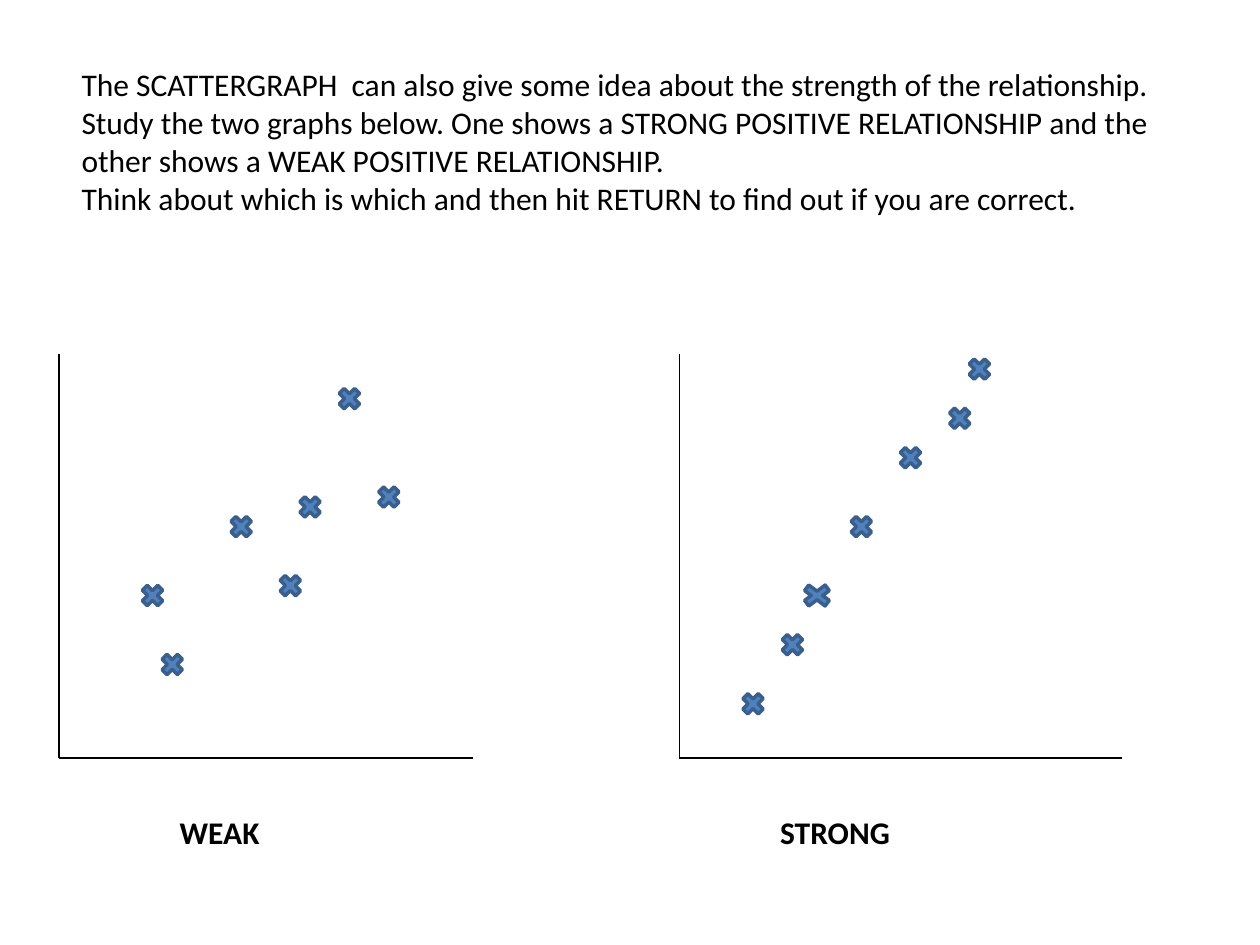
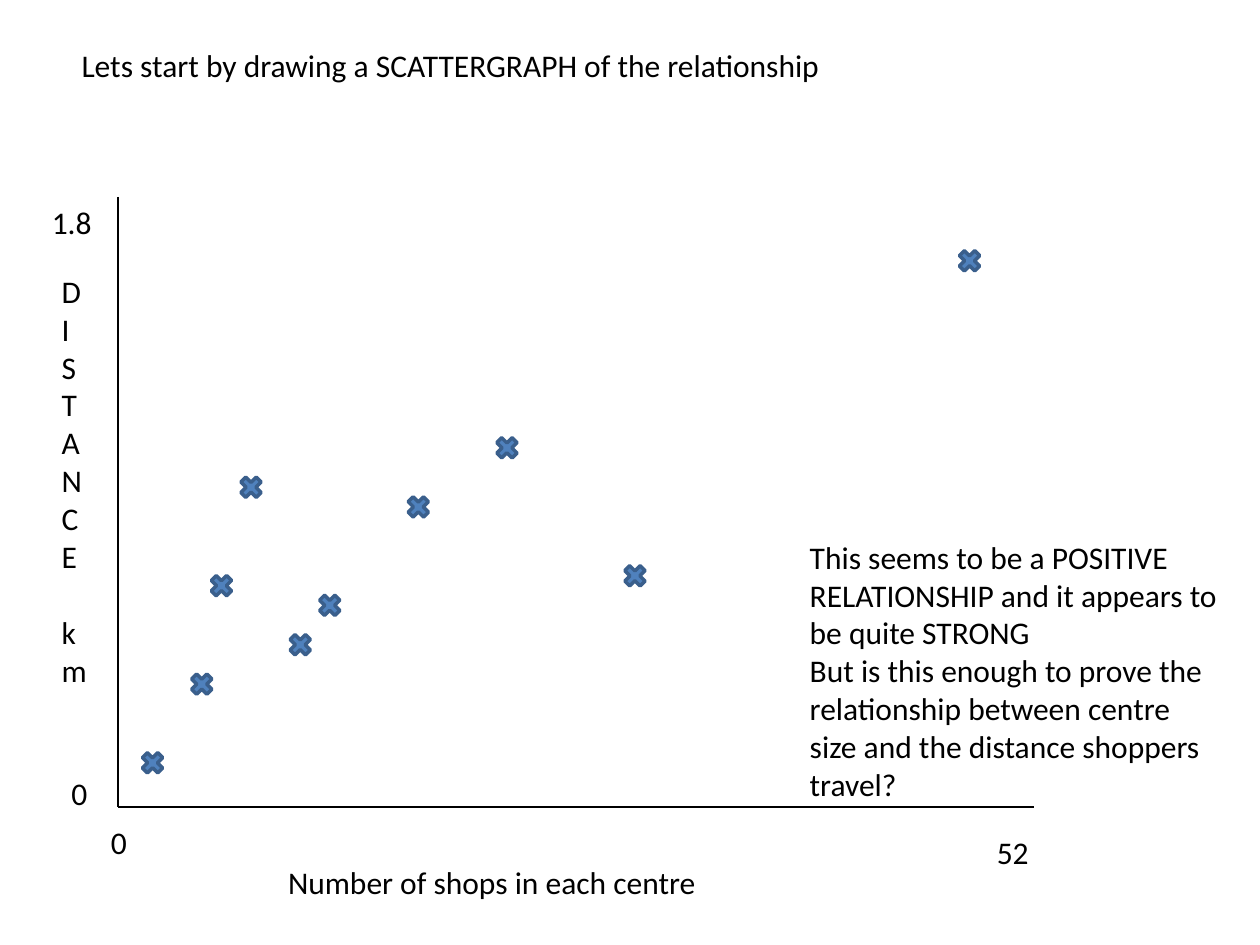
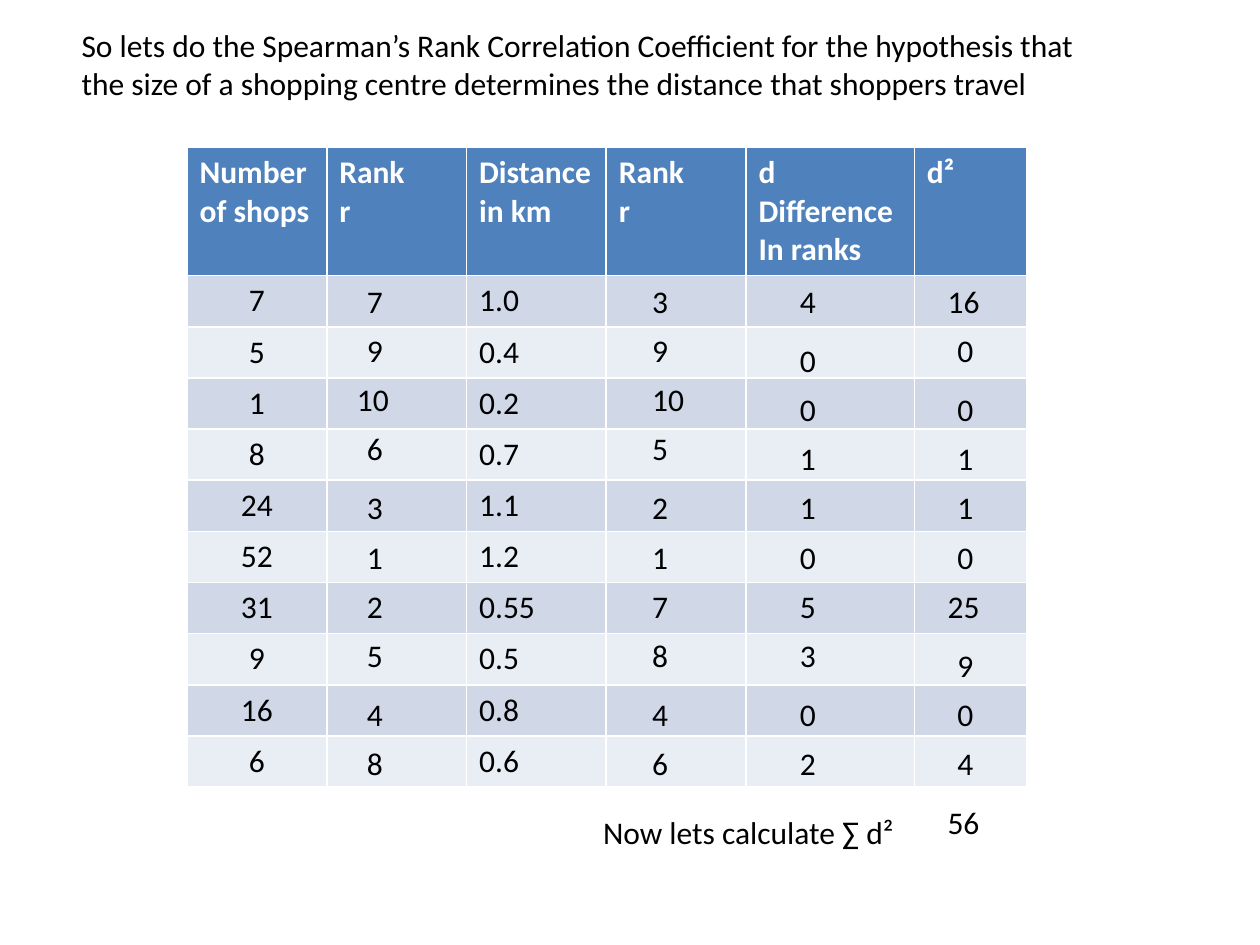
from pptx import Presentation
from pptx.dml.color import RGBColor
from pptx.enum.shapes import MSO_CONNECTOR, MSO_SHAPE
from pptx.enum.text import MSO_ANCHOR, MSO_AUTO_SIZE, PP_ALIGN
from pptx.oxml.ns import qn
from pptx.util import Emu, Pt
from lxml import etree

STRAIGHT = MSO_CONNECTOR.STRAIGHT
CROSS = MSO_SHAPE.MATH_MULTIPLY
LEFT, CENTER = PP_ALIGN.LEFT, PP_ALIGN.CENTER
TOP = MSO_ANCHOR.TOP
NO_FIT, GROW = MSO_AUTO_SIZE.NONE, MSO_AUTO_SIZE.SHAPE_TO_FIT_TEXT

BLACK = RGBColor(0x00, 0x00, 0x00)
WHITE = RGBColor(0xFF, 0xFF, 0xFF)
BLUE = RGBColor(0x4F, 0x81, 0xBD)
DARK_BLUE = RGBColor(0x3A, 0x5F, 0x8C)
BAND_DARK = RGBColor(0xD0, 0xD8, 0xE8)
BAND_LIGHT = RGBColor(0xE9, 0xED, 0xF4)

FONT, TEXT_SIZE = "Calibri", Pt(18)
TITLE_ONLY = 5
LINE_H = 51
MARKER = 30


def px(n):
    """Convert px to EMU, at 128 px to the inch."""
    return Emu(round(n * 914400 / 128))


def write(tf, lines, color=BLACK, bold=False, align=LEFT):
    """Write one paragraph for each line."""
    for i, line in enumerate(lines):
        p = tf.paragraphs[0] if i == 0 else tf.add_paragraph()
        p.alignment = align
        r = p.add_run()
        r.text = line
        r.font.name, r.font.size = FONT, TEXT_SIZE
        r.font.bold, r.font.color.rgb = bold, color


def add_text(s, x, y, w, lines, h=LINE_H, bold=False):
    tf = s.shapes.add_textbox(px(x), px(y), px(w), px(h)).text_frame
    tf.word_wrap, tf.auto_size = True, GROW
    write(tf, lines, bold=bold)
    return tf


def add_slide(prs, title_lines, y, w, h):
    """Add a slide whose title is a small left-aligned text."""
    s = prs.slides.add_slide(prs.slide_layouts[TITLE_ONLY])
    title = s.shapes.title
    title.left, title.top, title.width, title.height = px(70), px(y), px(w), px(h)
    tf = title.text_frame
    tf.word_wrap, tf.auto_size, tf.vertical_anchor = True, NO_FIT, TOP
    write(tf, title_lines)
    return s


def add_axis(s, x1, y1, x2, y2):
    line = s.shapes.add_connector(STRAIGHT, px(x1), px(y1), px(x2), px(y2))
    line.line.color.rgb, line.line.width = BLACK, Pt(0.75)
    etree.SubElement(line._element.spPr, qn("a:effectLst"))


def add_scatter(s, x, y, w, h, points):
    """Draw both axes and a cross at each point (dx, dy[, width]) of the box."""
    add_axis(s, x, y, x, y + h)
    add_axis(s, x, y + h, x + w, y + h)
    for dx, dy, *width in points:
        sp = s.shapes.add_shape(CROSS, px(x + dx), px(y + dy),
                                px(width[0] if width else MARKER), px(MARKER))
        sp.shadow.inherit = False
        sp.fill.solid()
        sp.fill.fore_color.rgb = BLUE
        sp.line.color.rgb, sp.line.width = DARK_BLUE, Pt(2)


def strength_slide(prs):
    s = add_slide(prs, [
        "The SCATTERGRAPH  can also give some idea about the strength of the relationship.",
        "Study the two graphs below. One shows a STRONG POSITIVE RELATIONSHIP and the "
        "other shows a WEAK POSITIVE RELATIONSHIP.",
        "Think about which is which and then hit RETURN to find out if you are correct.",
    ], 60, 1130, 168)
    weak = [(170, 160), (320, 130), (100, 300), (280, 30), (220, 220), (80, 230), (240, 140)]
    strong = [(290, 0), (220, 90), (170, 160), (120, 230, 40), (100, 280), (60, 340), (270, 50)]
    y, h = 360, 410
    for x, w, points, label, label_dx, label_w in (
            (60, 420, weak, "WEAK", 110, 180),
            (690, 450, strong, "STRONG", 90, 200)):
        add_scatter(s, x, y, w, h, points)
        add_text(s, x + label_dx, y + h + 50, label_w, [label], bold=True)


def shops_scatter(s, x, y, w, h):
    add_scatter(s, x, y, w, h, [
        (120, 280), (70, 480), (20, 560), (170, 440), (380, 240),
        (850, 50), (510, 370), (200, 400), (290, 300), (90, 380)])
    for dx, dy, label_w, label in (
            (-20, h + 10, 70, "0"),
            (w - 50, h + 20, 60, "52"),
            (160, h + 50, 530, "Number of shops in each centre"),
            (-60, h - 40, 40, "0"),
            (-80, 0, 70, "1.8")):
        add_text(s, x + dx, y + dy, label_w, [label])
    tf = add_text(s, x - 70, y + 70, 50, [*"DISTANCE", "km"], h=439)
    tf.paragraphs[-1].space_before = Pt(22)


def shops_slide(prs):
    s = add_slide(prs, ["Lets start by drawing a SCATTERGRAPH of the relationship"],
                  40, 1090, LINE_H)
    shops_scatter(s, 120, 200, 930, 620)
    add_text(s, 810, 540, 440, [
        "This seems to be a POSITIVE RELATIONSHIP and it appears to be quite STRONG",
        "But is this enough to prove the relationship between centre size and the "
        "distance shoppers travel?"], h=284)


def rank_table(s, x, y):
    headers = [["Number of shops"], ["Rank", "r"], ["Distance in km"], ["Rank", "r"],
               ["d", "Difference", "In ranks"], ["d²"]]
    shops = [7, 5, 1, 8, 24, 52, 31, 9, 16, 6]
    km = ["1.0", "0.4", "0.2", "0.7", "1.1", "1.2", "0.55", "0.5", "0.8", "0.6"]
    widths = [142, 142, 142, 142, 171, 114]
    heights = [128] + [52] * len(shops)
    table = s.shapes.add_table(len(heights), len(widths), px(x), px(y),
                               px(sum(widths)), px(sum(heights))).table
    for col, w in zip(table.columns, widths):
        col.width = px(w)
    for i, h in enumerate(heights):
        table.rows[i].height = px(h)
        for cell in table.rows[i].cells:
            cell.fill.solid()
            cell.fill.fore_color.rgb = (BAND_DARK if i % 2 else BAND_LIGHT) if i else BLUE
    for j, lines in enumerate(headers):
        write(table.cell(0, j).text_frame, lines, color=WHITE, bold=True)
    for i, (count, distance) in enumerate(zip(shops, km), 1):
        write(table.cell(i, 0).text_frame, [str(count)], align=CENTER)
        write(table.cell(i, 2).text_frame, [distance])


def rank_answers(s, x, y):
    """Lay the worked-out columns over the table, from its first data row."""
    rank_tops = [0, 50, 100, 150, 210, 260, 310, 360, 420, 470]
    d_tops = [0, 60, 110, 160, 210, 260, 310, 360, 420, 470]
    square_tops = [0, 50, 110, 160, 210, 260, 310, 370, 420, 470]
    for dx, two_digit_shift, tops, values in (
            (0, 10, rank_tops, [7, 9, 10, 6, 3, 1, 2, 5, 4, 8]),
            (290, 0, rank_tops, [3, 9, 10, 5, 2, 1, 7, 8, 4, 6]),
            (440, 0, d_tops, [4, 0, 0, 1, 1, 0, 5, 3, 0, 2]),
            (600, 10, square_tops, [16, 0, 0, 1, 1, 0, 25, 9, 0, 4])):
        for top, value in zip(tops, values):
            shift = two_digit_shift if value > 9 else 0
            add_text(s, x + dx - shift, y + top, 60, [str(value)])


def spearman_slide(prs):
    s = add_slide(prs, [
        "So lets do the Spearman’s Rank Correlation Coefficient for the hypothesis that "
        "the size of a shopping centre determines the distance that shoppers travel"],
        20, 1060, 91)
    rank_table(s, 190, 150)
    rank_answers(s, 360, 280)
    add_text(s, 600, 820, 340, ["Now lets calculate ∑ d²"])
    add_text(s, 950, 810, 90, ["56"])


def main():
    prs = Presentation()
    prs.slide_width, prs.slide_height = px(1280), px(960)
    strength_slide(prs)
    shops_slide(prs)
    spearman_slide(prs)
    prs.save("out.pptx")


if __name__ == "__main__":
    main()
